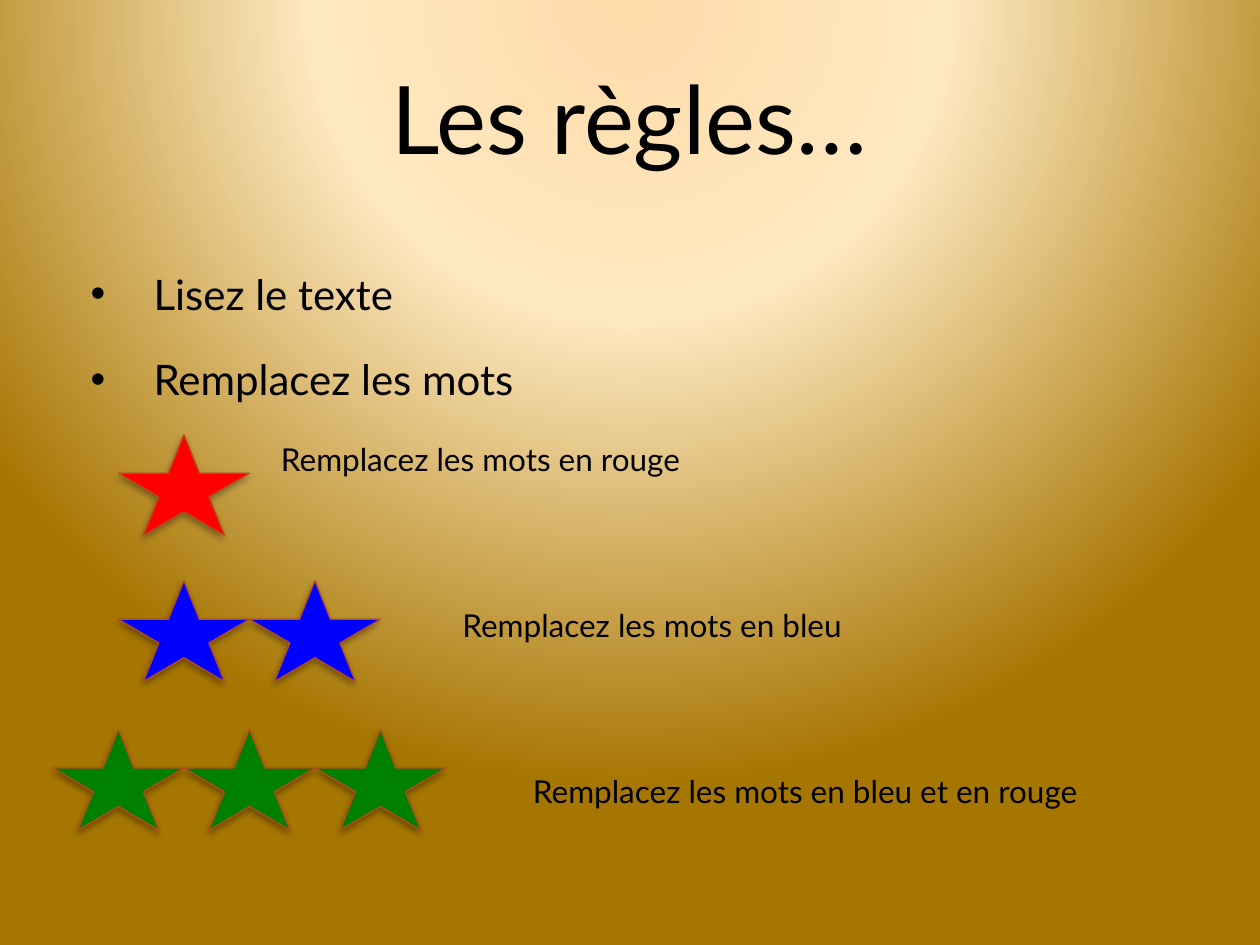
from pptx import Presentation
from pptx.dml.color import RGBColor
from pptx.enum.shapes import MSO_SHAPE
from pptx.enum.text import MSO_ANCHOR, PP_ALIGN
from pptx.oxml import parse_xml
from pptx.oxml.ns import nsdecls, qn
from pptx.util import Inches, Pt

STAR = MSO_SHAPE.STAR_5_POINT
MIDDLE = MSO_ANCHOR.MIDDLE
TOP = MSO_ANCHOR.TOP
CENTER = PP_ALIGN.CENTER
LEFT = PP_ALIGN.LEFT

FONT = "Lato"
COLORS = {
    "text": "000000",
    "red": "FF0000",
    "blue": "0000FF",
    "green": "008000",
    "outline": "B74A1D",
    "shadow": "000000",
    "glow": "FFDBA9",
    "cream": "FFE9C2",
    "gold": "A67602",
}
BACKGROUND_STOPS = [(0, "glow"), (40, "cream"), (100, "gold")]

STAR_WIDTH, STAR_HEIGHT = 1.04, 0.8
LABEL_TOP, LABEL_STEP = 3.49, 1.32
LEVELS = [
    ("red", 1, 0.94, 3.45, 2.23, "Remplacez les mots en rouge"),
    ("blue", 2, 0.94, 4.61, 3.67, "Remplacez les mots en bleu"),
    ("green", 3, 0.42, 5.79, 4.23, "Remplacez les mots en bleu et en rouge"),
]


def color(name):
    return RGBColor.from_string(COLORS[name])


def paint_background(page):
    stops = "".join(
        f'<a:gs pos="{position * 1000}"><a:srgbClr val="{COLORS[name]}"/></a:gs>'
        for position, name in BACKGROUND_STOPS
    )
    background = parse_xml(
        f'<p:bg {nsdecls("p", "a")}><p:bgPr><a:gradFill rotWithShape="1">'
        f'<a:gsLst>{stops}</a:gsLst><a:path path="circle">'
        '<a:fillToRect l="50000" t="-80000" r="50000" b="180000"/></a:path>'
        '</a:gradFill><a:effectLst/></p:bgPr></p:bg>'
    )
    page.element.find(qn("p:cSld")).insert(0, background)


def add_text(page, left, top, width, height, lines, size,
             align=LEFT, anchor=TOP, margin=0):
    box = page.shapes.add_textbox(
        Inches(left), Inches(top), Inches(width), Inches(height))
    frame = box.text_frame
    frame.word_wrap = True
    frame.vertical_anchor = anchor
    frame.margin_left = frame.margin_right = Inches(margin)
    frame.margin_top = frame.margin_bottom = Inches(margin / 2)
    frame.text = "\n".join(lines)
    for para in frame.paragraphs:
        para.alignment = align
        for span in para.runs:
            span.font.name = FONT
            span.font.size = Pt(size)
            span.font.color.rgb = color("text")
    return box


def add_bullets(box, indent, space_after):
    for para in box.text_frame.paragraphs:
        para.space_after = Pt(space_after)
        properties = para._p.get_or_add_pPr()
        properties.set("marL", str(Inches(indent)))
        properties.set("indent", str(-Inches(indent)))
        properties.append(parse_xml(
            f'<a:buFont {nsdecls("a")} typeface="Arial"/>'))
        properties.append(parse_xml(f'<a:buChar {nsdecls("a")} char="•"/>'))


def add_star(page, left, top, fill):
    star = page.shapes.add_shape(
        STAR, Inches(left), Inches(top), Inches(STAR_WIDTH), Inches(STAR_HEIGHT))
    star.fill.solid()
    star.fill.fore_color.rgb = color(fill)
    star.line.color.rgb = color("outline")
    star.line.width = Pt(0.75)
    star.shadow.inherit = False
    effects = star.element.spPr.find(qn("a:effectLst"))
    effects.append(parse_xml(
        f'<a:outerShdw {nsdecls("a")} blurRad="{Pt(4)}" dist="{Pt(2)}" '
        f'dir="{110 * 60000}" rotWithShape="0">'
        f'<a:srgbClr val="{COLORS["shadow"]}"><a:alpha val="35000"/></a:srgbClr>'
        '</a:outerShdw>'))


def main():
    deck = Presentation()
    deck.slide_width, deck.slide_height = Inches(10), Inches(7.5)
    page = deck.slides.add_slide(deck.slide_layouts[6])
    paint_background(page)

    add_text(page, 0.62, 0.3, 8.75, 1.25, ["Les règles…"], 54,
             align=CENTER, anchor=MIDDLE, margin=0.1)
    rules = add_text(page, 0.62, 2.08, 8.75, 1.3,
                     ["Lisez le texte", "Remplacez les mots"], 24, margin=0.1)
    add_bullets(rules, 0.5, 20)

    for row, (fill, count, left, top, label_left, label) in enumerate(LEVELS):
        add_text(page, label_left, LABEL_TOP + row * LABEL_STEP, 5, 0.3,
                 [label], 18)
        for index in range(count):
            add_star(page, left + index * STAR_WIDTH, top, fill)

    deck.save("out.pptx")


if __name__ == "__main__":
    main()
